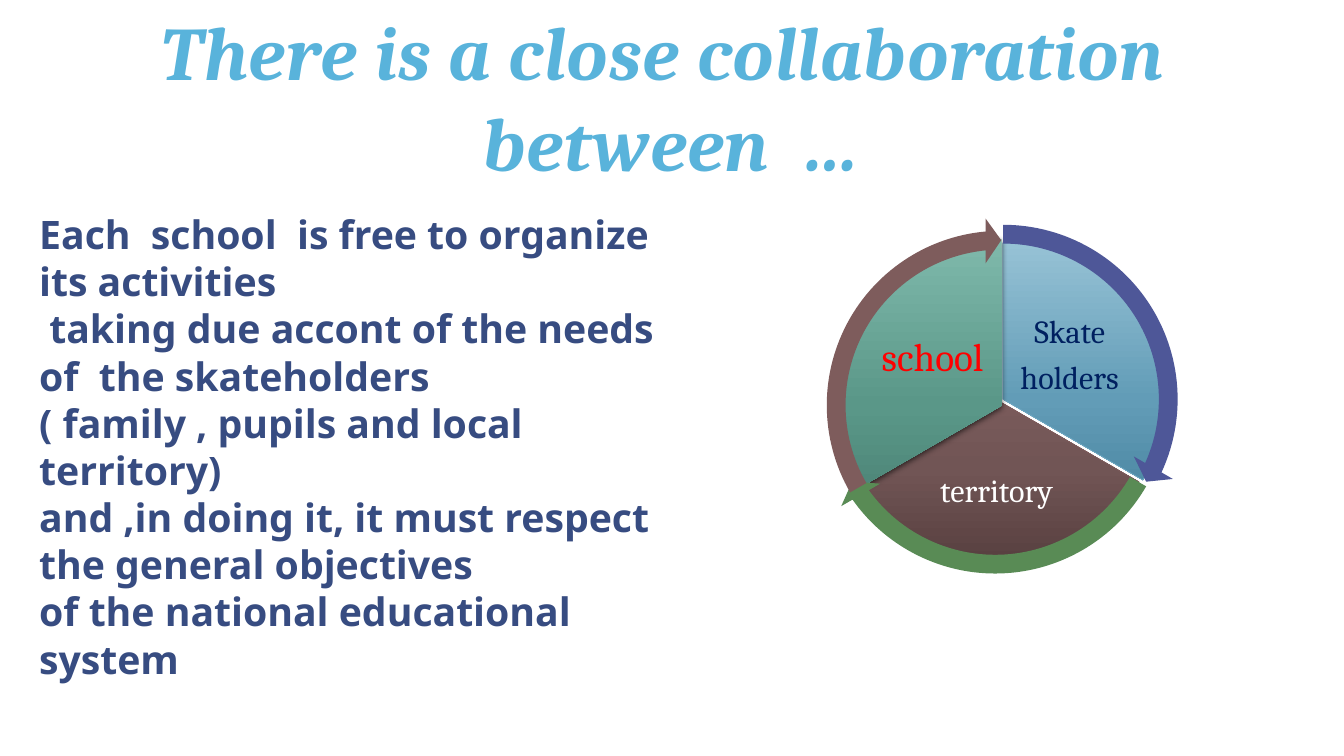
from copy import deepcopy

from lxml.etree import SubElement
from pptx import Presentation
from pptx.dml.color import RGBColor
from pptx.enum.shapes import MSO_SHAPE as Shape
from pptx.enum.text import MSO_ANCHOR as Anchor, MSO_AUTO_SIZE as AutoSize, PP_ALIGN as Align
from pptx.oxml.ns import qn
from pptx.util import Pt

PX = 9144
SERIF, SANS = "Cambria", "Noto Sans"
SKY = RGBColor(0x59, 0xB3, 0xDB)
INDIGO = RGBColor(0x37, 0x4C, 0x81)
NAVY = RGBColor(0x00, 0x20, 0x60)
WHITE = RGBColor(0xFF, 0xFF, 0xFF)
RED = RGBColor(0xFF, 0x00, 0x00)
VIOLET = RGBColor(0x4E, 0x57, 0x98)
GREEN = RGBColor(0x59, 0x8B, 0x55)
BROWN = RGBColor(0x7E, 0x5C, 0x5C)
BLUE_EDGE = RGBColor(0x70, 0xAA, 0xC4)
BLUES = [RGBColor(0x96, 0xC2, 0xD5), RGBColor(0x62, 0x9C, 0xB7), RGBColor(0x3E, 0x7B, 0x96)]
BROWNS = [RGBColor(0x95, 0x6C, 0x6C), RGBColor(0x71, 0x55, 0x55), RGBColor(0x57, 0x3F, 0x3F)]
TEALS = [RGBColor(0x7F, 0xB9, 0xAB), RGBColor(0x5A, 0x97, 0x88), RGBColor(0x41, 0x75, 0x68)]

TITLE = ["There is a close collaboration", " between  …"]
BODY = [
    "Each  school  is free to organize its activities",
    " taking due accont of the needs",
    "of  the skateholders",
    "( family , pupils and local territory)",
    "and ,in doing it, it must respect the general objectives",
    "of the national educational system",
]


def scaled(bounds):
    """Turn px lengths into EMU."""
    return [length * PX for length in bounds]


def add_text(page, bounds, lines, font, size, color, align=Align.LEFT, anchor=Anchor.MIDDLE):
    """Add a text box with one paragraph per line and return its frame."""
    frame = page.shapes.add_textbox(*scaled(bounds)).text_frame
    frame.word_wrap = True
    frame.vertical_anchor = anchor
    frame.text = "\n".join(lines)
    for para in frame.paragraphs:
        para.alignment = align
        for span in para.runs:
            span.font.name = font
            span.font.size = Pt(size)
            span.font.color.rgb = color
    return frame


def add_title(page):
    """Add the slanted heading."""
    frame = add_text(page, (58, 0, 1200, 192), TITLE, SERIF, 54, SKY, Align.CENTER, Anchor.TOP)
    frame.word_wrap = False
    frame.auto_size = AutoSize.SHAPE_TO_FIT_TEXT
    for para in frame.paragraphs:
        for span in para.runs:
            span.font.bold = span.font.italic = True
            span.font._element.set("spc", "50")


def add_body(page):
    """Add the bold explanation on the left."""
    frame = add_text(page, (29, 202, 669, 481), BODY, SANS, 28, INDIGO)
    frame.auto_size = AutoSize.SHAPE_TO_FIT_TEXT
    for para in frame.paragraphs:
        para.line_spacing = Pt(33.7)
        for span in para.runs:
            span.font.bold = True


def add_label(page, bounds, lines, size, color, inset):
    """Add the centred wording of a sector."""
    frame = add_text(page, bounds, lines, SERIF, size, color, Align.CENTER)
    frame.margin_left = frame.margin_right = inset * PX
    frame.margin_top = frame.margin_bottom = inset * PX
    for para in frame.paragraphs:
        para.line_spacing = 0.9
        para.space_after = Pt(round(size * 0.35))


def add_turned(page, kind, bounds, adjustments):
    """Add a shape whose outline is set by its adjustments."""
    shape = page.shapes.add_shape(kind, *scaled(bounds))
    shape.shadow.inherit = False
    for index, value in enumerate(adjustments):
        shape.adjustments[index] = value
    return shape


def add_sector(page, bounds, angles, colors, middle, edge=None):
    """Add a pie sector with a three-stop vertical gradient."""
    sector = add_turned(page, Shape.PIE, bounds, angles)
    sector.fill.gradient()
    sector.fill.gradient_angle = 270
    stop_list = sector._element.spPr.find(".//" + qn("a:gsLst"))
    stop_list.insert(1, deepcopy(stop_list[0]))
    for stop, position, color in zip(sector.fill.gradient_stops, (0, middle, 1), colors):
        stop.position = position
        stop.color.rgb = color
    if edge is None:
        sector.line.fill.background()
    else:
        sector.line.color.rgb = edge
        sector.line.width = Pt(0.5)
    return sector


def add_drop_shadow(shape):
    """Give a shape a soft shadow below it."""
    effects = shape._element.spPr.find(qn("a:effectLst"))
    shadow = SubElement(effects, qn("a:outerShdw"), blurRad=str(Pt(4.5)), dist=str(Pt(1.5)),
                        dir="5400000", rotWithShape="0")
    color = SubElement(shadow, qn("a:srgbClr"), val="000000")
    SubElement(color, qn("a:alpha"), val="63000")


def add_arrow(page, left, top, end, start, color):
    """Add a curved arrow along the rim of the wheel."""
    arrow = add_turned(page, Shape.CIRCULAR_ARROW, (left, top, 372, 372),
                       (0.05, 3.28, end, start, 0.06))
    arrow.fill.solid()
    arrow.fill.fore_color.rgb = color
    arrow.line.fill.background()


def add_wheel(page):
    """Add the three labelled sectors and the arrows around them."""
    add_sector(page, (832, 241, 325, 310), (162, 18), BLUES, 0.5, BLUE_EDGE)
    add_label(page, (1003, 307, 116, 92), ["Skate", "holders"], 23, NAVY, 3)
    add_sector(page, (821, 230, 331, 331), (18, 90), BROWNS, 0.71, BROWN)
    add_label(page, (900, 445, 177, 87), ["territory"], 23, WHITE, 3)
    add_drop_shadow(add_sector(page, (828, 237, 331, 331), (90, 162), TEALS, 0.5))
    add_label(page, (866, 307, 118, 98), ["school"], 28, RED, 4)
    add_arrow(page, 809, 210, 14.73, 161.99, VIOLET)
    add_arrow(page, 801, 210, 86.72, 18, GREEN)
    add_arrow(page, 807, 216, 158.73, 90, BROWN)


def main():
    """Build the slide and save it."""
    deck = Presentation()
    deck.slide_width, deck.slide_height = scaled((1333, 750))
    page = deck.slides.add_slide(deck.slide_layouts[6])
    add_wheel(page)
    add_body(page)
    add_title(page)
    deck.save("out.pptx")


if __name__ == "__main__":
    main()
